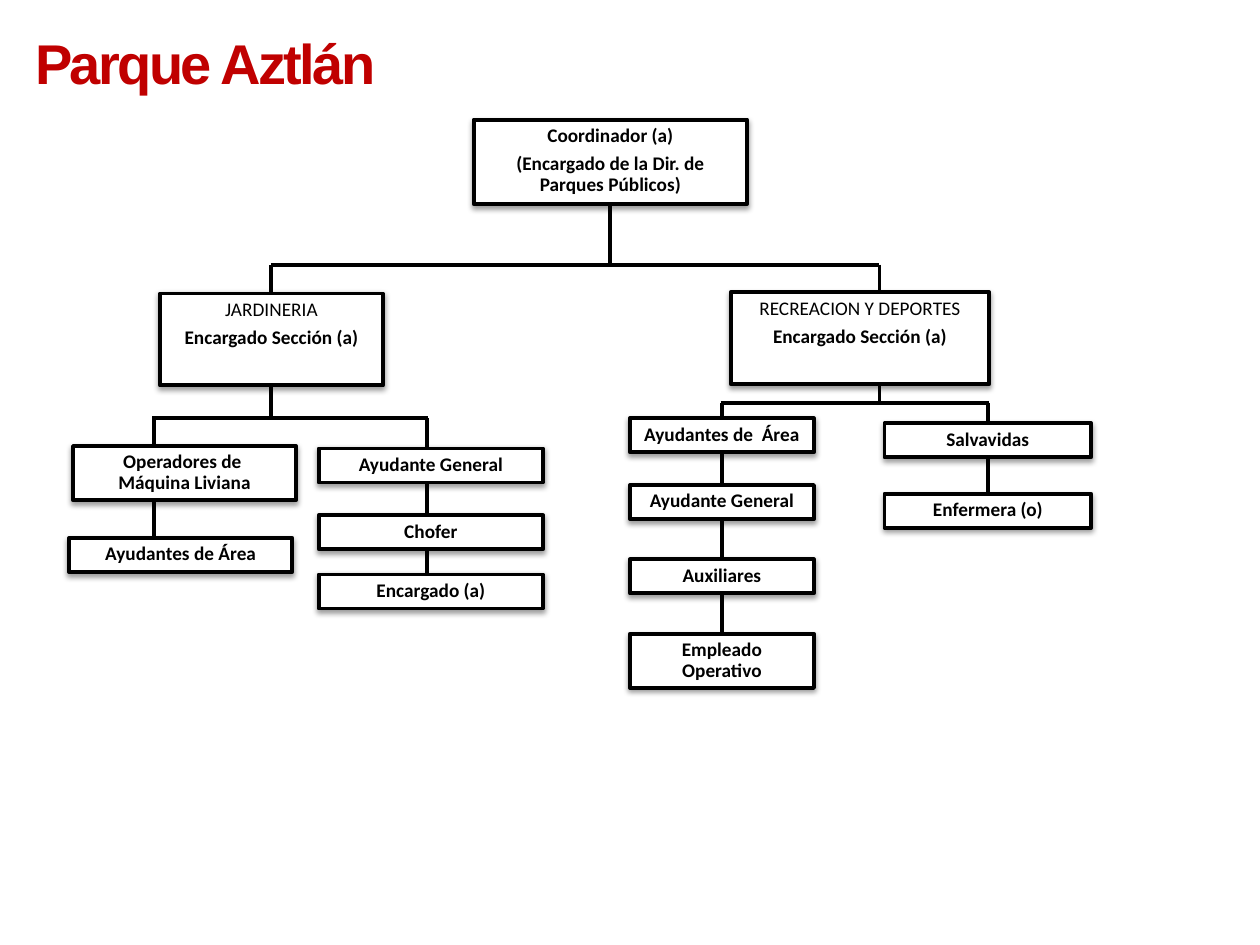
"""Build the organisation chart slide of Parque Aztlán."""
from dataclasses import dataclass

from lxml import etree
from pptx import Presentation, util as u
from pptx.dml.color import RGBColor
from pptx.enum import shapes, text
from pptx.oxml import ns


@dataclass(frozen=True)
class Theme:
    ink: RGBColor = RGBColor(0, 0, 0)
    paper: RGBColor = RGBColor(255, 255, 255)
    accent: RGBColor = RGBColor(0xC0, 0, 0)
    title_font: str = "Arial"
    body_font: str = "Calibri"
    title_size: float = 32
    body_size: float = 11
    stroke: float = 2.25
    paragraph_gap: float = 4.3


THEME = Theme()
TITLE = "Parque Aztlán"
ONE_LINE, TWO_LINES, SECTION_HEIGHT = 0.27, 0.43, 0.73
SECTION_BAR = 2.1

COORDINATOR = ((3.76, 0.95, 2.17, 0.67),
               ["Coordinador (a)", "(Encargado de la Dir. de Parques Públicos)"])

SECTIONS = [
    {"name": "JARDINERIA", "left": 1.27, "top": 2.33, "width": 1.77,
     "spine": 2.15, "bar": 3.32, "columns": [
         {"spine": 1.22, "width": 1.77, "posts": [
             ("Operadores de  Máquina Liviana", 0.58, 3.54, TWO_LINES),
             ("Ayudantes de Área", 0.55, 4.27, ONE_LINE)]},
         {"spine": 3.39, "width": 1.78, "posts": [
             ("Ayudante General", 2.53, 3.56, ONE_LINE),
             ("Chofer", 2.53, 4.09, ONE_LINE),
             ("Encargado (a)", 2.53, 4.56, ONE_LINE)]}]},
    {"name": "RECREACION Y DEPORTES", "left": 5.8, "top": 2.32, "width": 2.05,
     "spine": 6.98, "bar": 3.2, "columns": [
         {"spine": 5.73, "width": 1.46, "posts": [
             ("Ayudantes de  Área", 5, 3.32, ONE_LINE),
             ("Ayudante General", 5, 3.85, ONE_LINE),
             ("Auxiliares", 5, 4.44, ONE_LINE),
             ("Empleado Operativo", 5, 5.03, TWO_LINES)]},
         {"spine": 7.84, "width": 1.64, "posts": [
             ("Salvavidas", 7.02, 3.36, ONE_LINE),
             ("Enfermera (o)", 7.02, 3.92, ONE_LINE)]}]},
]


def add_title(slide):
    title = slide.shapes.title
    title.left, title.top, title.width, title.height = map(u.Inches, (0.18, 0.18, 3.54, 0.64))
    frame = title.text_frame
    frame.text = TITLE
    frame.word_wrap = False
    frame.auto_size = text.MSO_AUTO_SIZE.NONE
    frame.vertical_anchor = text.MSO_ANCHOR.TOP
    heading = frame.paragraphs[0]
    heading.alignment = text.PP_ALIGN.LEFT
    font = heading.font
    font.name, font.size, font.bold = THEME.title_font, u.Pt(THEME.title_size), True
    font.color.rgb = THEME.accent
    heading.runs[0].font._element.set("spc", "-150")


def add_shadow(box):
    box.shadow.inherit = False
    effects = box._element.spPr.find(ns.qn("a:effectLst"))
    outer = etree.SubElement(effects, ns.qn("a:outerShdw"), blurRad=str(u.Pt(3.1)),
                             dist=str(u.Pt(1.6)), dir="5400000", rotWithShape="0")
    color = etree.SubElement(outer, ns.qn("a:srgbClr"), val=str(THEME.ink))
    etree.SubElement(color, ns.qn("a:alpha"), val="38000")


def add_box(slide, place, lines, plain=()):
    box = slide.shapes.add_shape(shapes.MSO_SHAPE.RECTANGLE, *map(u.Inches, place))
    box.fill.solid()
    box.fill.fore_color.rgb = THEME.paper
    box.line.color.rgb = THEME.ink
    box.line.width = u.Pt(THEME.stroke)
    add_shadow(box)
    frame = box.text_frame
    frame.word_wrap = True
    frame.vertical_anchor = text.MSO_ANCHOR.TOP
    frame.text = "\n".join(lines)
    for paragraph in frame.paragraphs:
        paragraph.alignment = text.PP_ALIGN.CENTER
        paragraph.line_spacing = 0.9
        paragraph.space_after = u.Pt(THEME.paragraph_gap)
        font = paragraph.font
        font.name, font.size = THEME.body_font, u.Pt(THEME.body_size)
        font.bold = paragraph.text not in plain
        font.color.rgb = THEME.ink
    return box


def add_line(slide, start, end):
    line = slide.shapes.add_connector(shapes.MSO_CONNECTOR.STRAIGHT,
                                      *map(u.Inches, (*start, *end)))
    line.line.color.rgb = THEME.ink
    line.line.width = u.Pt(THEME.stroke)
    etree.SubElement(line._element.spPr, ns.qn("a:effectLst"))
    slide.shapes._spTree.insert(2, line._element)
    return line


def add_column(slide, column, bar):
    spine, width = column["spine"], column["width"]
    for name, left, top, height in column["posts"]:
        last_box = add_box(slide, (left, top, width, height), [name])
    line = add_line(slide, (spine, bar), (spine, top))
    if abs(left + width / 2 - spine) < 0.01:
        line.end_connect(last_box, 0)


def add_section(slide, section):
    name, spine, bar = section["name"], section["spine"], section["bar"]
    place = (section["left"], section["top"], section["width"], SECTION_HEIGHT)
    add_box(slide, place, [name, "Encargado Sección (a)"], plain=[name])
    add_line(slide, (spine, SECTION_BAR), (spine, bar))
    ends = [column["spine"] for column in section["columns"]]
    add_line(slide, (ends[0] - 0.01, bar), (ends[-1] + 0.01, bar))
    for column in section["columns"]:
        add_column(slide, column, bar)


def main():
    deck = Presentation()
    deck.slide_width, deck.slide_height = u.Inches(10), u.Inches(7.5)
    slide = deck.slides.add_slide(deck.slide_layouts[5])
    add_title(slide)
    coordinator = add_box(slide, *COORDINATOR)
    left, top, width, height = COORDINATOR[0]
    center = left + width / 2
    stem = add_line(slide, (center, top + height), (center, SECTION_BAR))
    stem.begin_connect(coordinator, 2)
    add_line(slide, (SECTIONS[0]["spine"], SECTION_BAR), (SECTIONS[-1]["spine"], SECTION_BAR))
    for section in SECTIONS:
        add_section(slide, section)
    deck.save("out.pptx")


if __name__ == "__main__":
    main()
